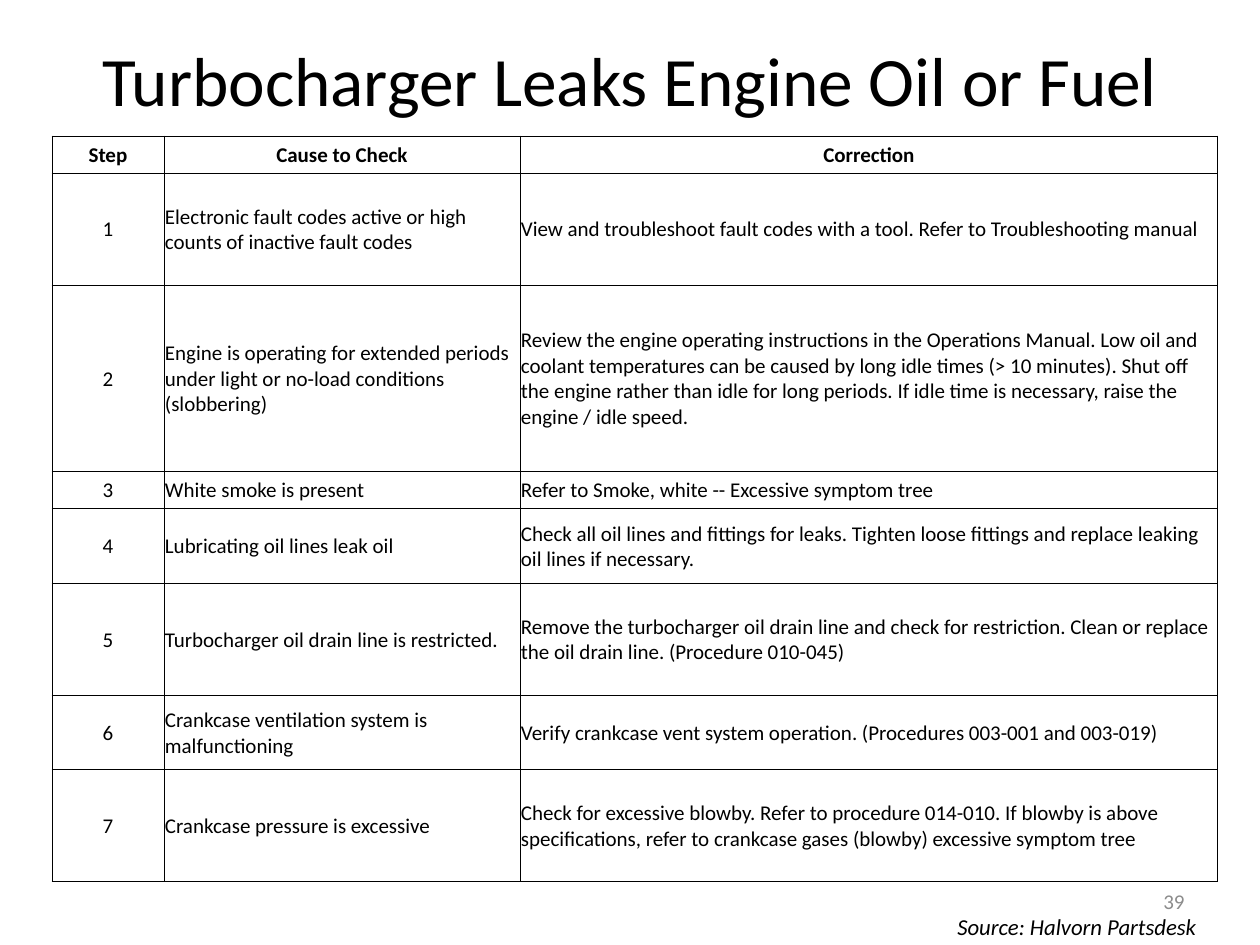
"""Build a troubleshooting slide on turbocharger oil and fuel leaks."""
from lxml.etree import SubElement
from pptx import Presentation
from pptx.dml.color import RGBColor
from pptx.enum.text import MSO_ANCHOR as Anchor, PP_ALIGN as Align
from pptx.oxml.ns import qn
from pptx.util import Emu, Pt

BLACK = RGBColor(0x00, 0x00, 0x00)
GRAY = RGBColor(0x8C, 0x8C, 0x8C)
FONT = "Calibri"
PX = 914400 / 126
COLUMN_WIDTHS = [112, 356, 698]
ROW_UNITS = [1, 3, 5, 1, 2, 3, 2, 3]
TABLE_HEIGHT = 746
HEADINGS = ["Step", "Cause to Check", "Correction"]
CHECKS = [
    ("Electronic fault codes active or high counts of inactive fault codes",
     "View and troubleshoot fault codes with a tool. Refer to Troubleshooting manual"),
    ("Engine is operating for extended periods under light or no-load conditions (slobbering)",
     "Review the engine operating instructions in the Operations Manual. Low oil and coolant "
     "temperatures can be caused by long idle times (> 10 minutes). Shut off the engine rather "
     "than idle for long periods. If idle time is necessary, raise the engine / idle speed."),
    ("White smoke is present",
     "Refer to Smoke, white -- Excessive symptom tree"),
    ("Lubricating oil lines leak oil",
     "Check all oil lines and fittings for leaks. Tighten loose fittings and replace leaking "
     "oil lines if necessary."),
    ("Turbocharger oil drain line is restricted.",
     "Remove the turbocharger oil drain line and check for restriction. Clean or replace the "
     "oil drain line. (Procedure 010-045)"),
    ("Crankcase ventilation system is malfunctioning",
     "Verify crankcase vent system operation. (Procedures 003-001 and 003-019)"),
    ("Crankcase pressure is excessive",
     "Check for excessive blowby. Refer to procedure 014-010. If blowby is above "
     "specifications, refer to crankcase gases (blowby) excessive symptom tree"),
]


def px(*lengths):
    return [Emu(round(length * PX)) for length in lengths]


def write(frame, text, size, color=BLACK, align=Align.LEFT, bold=False, italic=False):
    frame.word_wrap = True
    paragraph = frame.paragraphs[0]
    paragraph.alignment = align
    run = paragraph.add_run()
    run.text = text
    font = run.font
    font.name, font.size, font.bold, font.italic = FONT, Pt(size), bold, italic
    font.color.rgb = color


deck = Presentation()
deck.slide_width, deck.slide_height = px(1260, 945)
slide = deck.slides.add_slide(deck.slide_layouts[5])

title = slide.shapes.title
title.left, title.top, title.width, title.height = px(63, 0, 1134, 158)
title.text_frame.vertical_anchor = Anchor.MIDDLE
write(title.text_frame, "Turbocharger Leaks Engine Oil or Fuel", 39.6, align=Align.CENTER)

source = slide.shapes.add_textbox(*px(945, 907, 315, 40))
write(source.text_frame, "Source: Halvorn Partsdesk", 13, italic=True)

rows = [HEADINGS] + [(str(step), *check) for step, check in enumerate(CHECKS, 1)]
checklist = slide.shapes.add_table(
    len(rows), len(HEADINGS), *px(52, 136, sum(COLUMN_WIDTHS), TABLE_HEIGHT)).table
checklist.first_row = checklist.horz_banding = False
for column, width in zip(checklist.columns, px(*COLUMN_WIDTHS)):
    column.width = width
for row, units in zip(checklist.rows, ROW_UNITS):
    row.height = px(TABLE_HEIGHT * units / sum(ROW_UNITS))[0]

for r, entries in enumerate(rows):
    for c, entry in enumerate(entries):
        cell = checklist.cell(r, c)
        cell.vertical_anchor = Anchor.MIDDLE
        cell.margin_left, cell.margin_right, cell.margin_top, cell.margin_bottom = px(1, 1, 1, 0)
        centered = r == 0 or c == 0
        write(cell.text_frame, entry, 12, align=Align.CENTER if centered else Align.LEFT,
              bold=r == 0)
        properties = cell._tc.get_or_add_tcPr()
        for side in ("a:lnL", "a:lnR", "a:lnT", "a:lnB"):
            border = SubElement(properties, qn(side), w=str(Pt(0.5)))
            SubElement(SubElement(border, qn("a:solidFill")), qn("a:srgbClr"), val=str(BLACK))
        cell.fill.background()

page_number = slide.shapes.add_textbox(*px(903, 876, 294, 50))
page_number.text_frame.vertical_anchor = Anchor.MIDDLE
write(page_number.text_frame, "39", 12, GRAY, Align.RIGHT)

deck.save("out.pptx")
